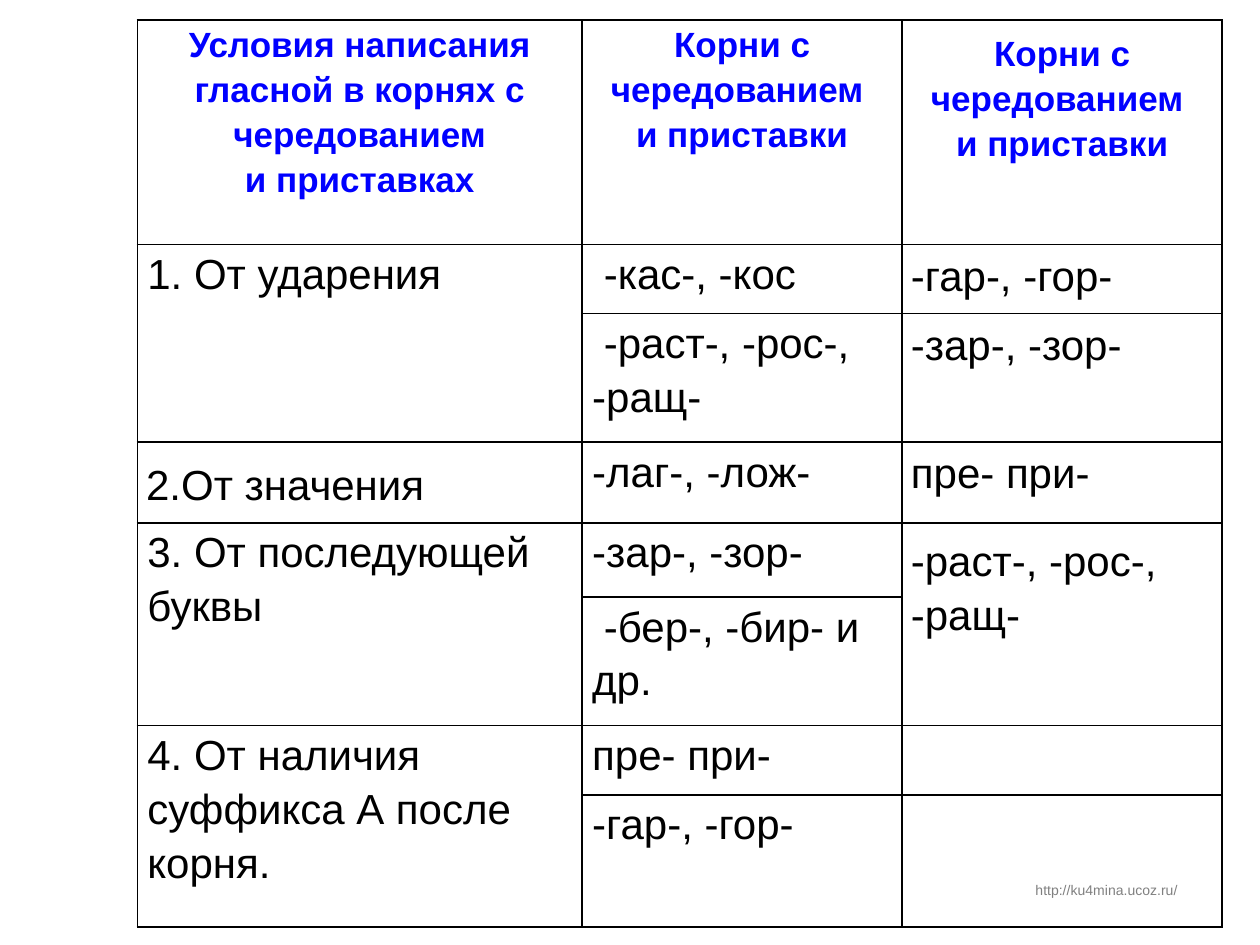
from dataclasses import dataclass
from lxml.etree import SubElement
from pptx import Presentation
from pptx.dml.color import RGBColor
from pptx.enum.text import MSO_ANCHOR, MSO_AUTO_SIZE, PP_ALIGN
from pptx.oxml.ns import qn
from pptx.util import Inches, Pt


@dataclass(frozen=True)
class Theme:
    font: str = "Arial"
    head: str = "0000FF"
    body: str = "000000"
    note: str = "808080"
    rule: str = "000000"
    head_size: int = 20
    body_size: int = 24
    note_size: int = 8
    spacing: float = 1.15


THEME = Theme()
ROOTS = ["Корни с чередованием ", "и приставки"]
GROW = [" -раст-, -рос-,", "-ращ-"]
ROWS = [
    (["Условия написания гласной в корнях с чередованием", "и приставках"], ROOTS, ROOTS),
    (["1. От ударения"], [" -кас-, -кос"], ["-гар-, -гор-"]),
    (None, GROW, ["-зар-, -зор-"]),
    (["2.От значения"], ["-лаг-, -лож-"], ["пре- при-"]),
    (["3. От последующей буквы"], ["-зар-, -зор-"], ["-раст-, -рос-,", "-ращ-"]),
    (None, [" -бер-, -бир- и др."], None),
    (["4. От наличия суффикса А после корня."], ["пре- при-"], []),
    (None, ["-гар-, -гор-"], []),
]
WIDTHS = [3.53, 2.54, 2.54]
HEIGHTS = [1.78, 0.55, 1.02, 0.64, 0.59, 1.02, 0.55, 1.05]
MERGES = [(1, 0), (4, 0), (6, 0), (4, 2)]
SITE = "http://ku4mina.ucoz.ru/"
MEANING = (3, 0)
TIGHT = (0.08, 0)
ROOMY = (0.07, 0.07)


def write(frame, lines, size, color, bold=False, align=PP_ALIGN.LEFT, spacing=None):
    for i, line in enumerate(lines):
        para = frame.paragraphs[0] if i == 0 else frame.add_paragraph()
        para.alignment = align
        if spacing:
            para.line_spacing = spacing
        run = para.add_run()
        run.text = line
        run.font.name = THEME.font
        run.font.size = Pt(size)
        run.font.bold = bold
        run.font.color.rgb = RGBColor.from_string(color)


def outline(cell):
    props = cell._tc.get_or_add_tcPr()
    for i, side in enumerate(("lnL", "lnR", "lnT", "lnB")):
        line = SubElement(props, qn(f"a:{side}"), w=str(Pt(1)))
        fill = SubElement(line, qn("a:solidFill"))
        SubElement(fill, qn("a:srgbClr"), val=THEME.rule)
        props.remove(line)
        props.insert(i, line)


def style(cell, row, col):
    roomy = col == 2 or (row, col) == MEANING
    side, edge = ROOMY if roomy else TIGHT
    cell.margin_left = cell.margin_right = Inches(side)
    cell.margin_top = cell.margin_bottom = Inches(edge)
    cell.vertical_anchor = MSO_ANCHOR.MIDDLE if (row, col) == MEANING else MSO_ANCHOR.TOP
    cell.fill.background()
    outline(cell)


def fill_cell(cell, lines, row, col):
    if row == 0:
        write(cell.text_frame, lines, THEME.head_size, THEME.head, bold=True,
              align=PP_ALIGN.CENTER, spacing=THEME.spacing)
        return
    single = col == 2 and len(lines) == 1
    align = PP_ALIGN.JUSTIFY if (row, col) == MEANING else PP_ALIGN.LEFT
    write(cell.text_frame, lines, THEME.body_size, THEME.body, align=align,
          spacing=None if single else THEME.spacing)


def add_site(slide):
    box = slide.shapes.add_textbox(Inches(8.12), Inches(6.95), Inches(1.37), Inches(0.24))
    box.text_frame.word_wrap = False
    box.text_frame.auto_size = MSO_AUTO_SIZE.SHAPE_TO_FIT_TEXT
    write(box.text_frame, [SITE], THEME.note_size, THEME.note)


def add_grid(slide):
    table = slide.shapes.add_table(
        len(ROWS), len(WIDTHS), Inches(1.09), Inches(0.16),
        Inches(sum(WIDTHS)), Inches(sum(HEIGHTS))).table
    table.first_row = table.horz_banding = False
    for column, width in zip(table.columns, WIDTHS):
        column.width = Inches(width)
    for line, height in zip(table.rows, HEIGHTS):
        line.height = Inches(height)
    for row, col in MERGES:
        table.cell(row, col).merge(table.cell(row + 1, col))
    for row, texts in enumerate(ROWS):
        for col, lines in enumerate(texts):
            cell = table.cell(row, col)
            style(cell, row, col)
            if lines:
                fill_cell(cell, lines, row, col)


def main():
    deck = Presentation()
    deck.slide_width, deck.slide_height = Inches(10), Inches(7.5)
    slide = deck.slides.add_slide(deck.slide_layouts[6])
    add_site(slide)
    add_grid(slide)
    deck.save("out.pptx")


if __name__ == "__main__":
    main()
